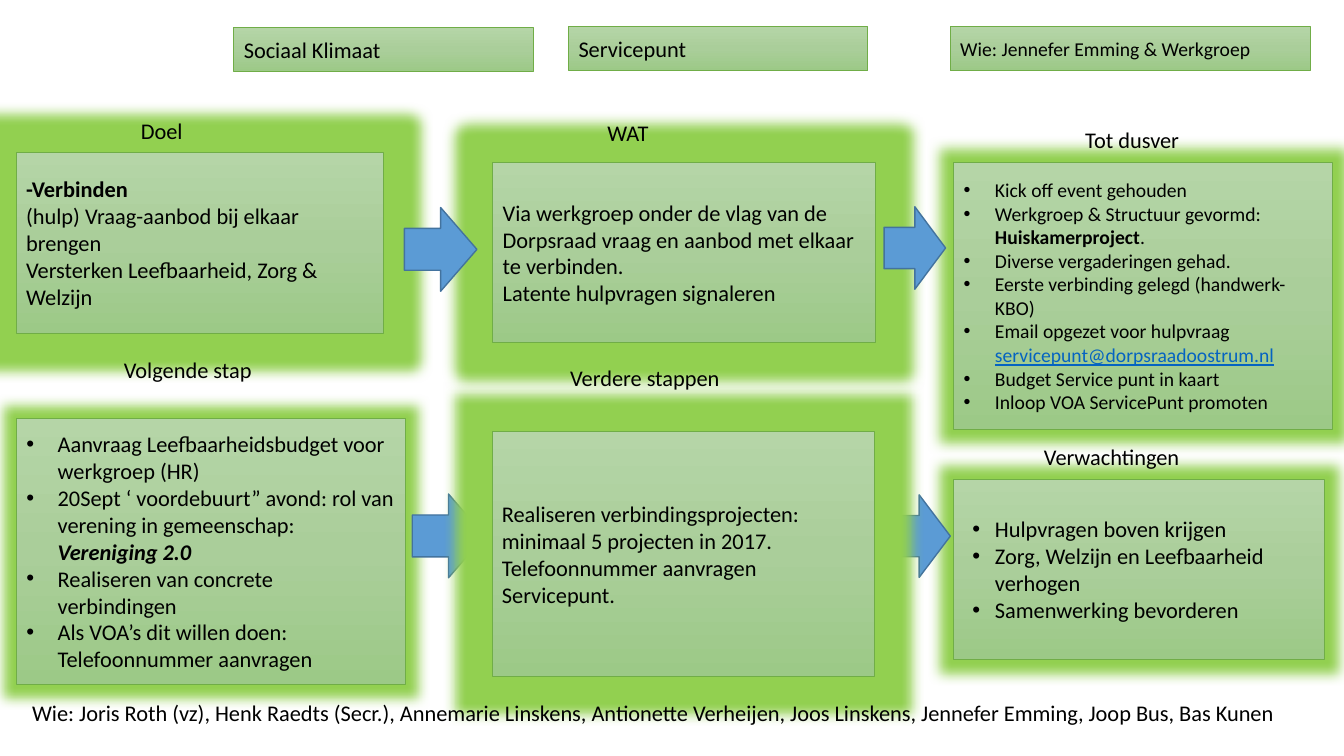
from dataclasses import dataclass
from lxml import etree
from pptx import Presentation
from pptx import util as u
from pptx.dml.color import RGBColor
from pptx.enum import shapes, text
from pptx.oxml.ns import qn


@dataclass(frozen=True)
class Theme:
    font: str = "Calibri"
    body: int = 16
    small: int = 14
    ink: str = "000000"
    link: str = "0563C1"
    top: str = "B5D5A7"
    middle: str = "AACE9A"
    bottom: str = "9CC987"
    border: str = "70AD47"
    glow: str = "92D050"
    arrow: str = "5B9BD5"
    arrow_border: str = "43739E"


theme = Theme()


def write(sp, paragraphs, size=theme.body, hanging=None, wrap=True):
    tf = sp.text_frame
    tf.word_wrap = wrap
    tf.auto_size = text.MSO_AUTO_SIZE.NONE if wrap else text.MSO_AUTO_SIZE.SHAPE_TO_FIT_TEXT
    tf.vertical_anchor = text.MSO_ANCHOR.MIDDLE if wrap else text.MSO_ANCHOR.TOP
    for i, runs in enumerate(paragraphs):
        p = tf.add_paragraph() if i else tf.paragraphs[0]
        p.alignment = text.PP_ALIGN.LEFT
        p.space_before = u.Pt(0)
        if hanging:
            pPr = p._p.get_or_add_pPr()
            pPr.set("marL", str(u.Cm(0.79)))
            pPr.set("indent", str(-u.Cm(hanging)))
            etree.SubElement(pPr, qn("a:buFont"), typeface="Arial")
            etree.SubElement(pPr, qn("a:buChar"), char="•")
        for content, style in runs:
            for j, line in enumerate(content.split("\n")):
                if j:
                    p.add_line_break()
                r = p.add_run()
                r.text = line
                r.font.name = theme.font
                r.font.size = u.Pt(size)
                r.font.bold = "b" in style
                r.font.italic = "i" in style
                r.font.underline = "u" in style
                r.font.color.rgb = RGBColor.from_string(theme.link if "u" in style else theme.ink)


def paint(sp, glow=True):
    sp.shadow.inherit = False
    sp.fill.gradient()
    sp.fill.gradient_angle = 270
    first, last = sp.fill.gradient_stops
    first.position, last.position = 0, 1
    first.color.rgb = RGBColor.from_string(theme.top)
    last.color.rgb = RGBColor.from_string(theme.bottom)
    stop = etree.Element(qn("a:gs"), pos="50000")
    etree.SubElement(stop, qn("a:srgbClr"), val=theme.middle)
    sp.element.find(".//" + qn("a:gsLst")).insert(1, stop)
    sp.line.color.rgb = RGBColor.from_string(theme.border)
    sp.line.width = u.Pt(0.5)
    if glow:
        effects = sp.element.find(".//" + qn("a:effectLst"))
        halo = etree.SubElement(effects, qn("a:glow"), rad=str(u.Pt(18)))
        etree.SubElement(halo, qn("a:srgbClr"), val=theme.glow)


prs = Presentation()
prs.slide_width, prs.slide_height = u.Cm(33.87), u.Cm(19.05)
s = prs.slides.add_slide(prs.slide_layouts[4])
bodies = [ph for ph in s.placeholders if ph.placeholder_format.idx in (1, 2, 3, 4)]

lists = [
    ((24.03, 4.09, 9.55, 6.73), theme.small, 0.79, [
        [("Kick off event gehouden", "")],
        [("Werkgroep & Structuur gevormd: ", ""), ("Huiskamerproject", "b"), (".", "")],
        [("Diverse vergaderingen gehad.", "")],
        [("Eerste verbinding gelegd (handwerk-KBO)", "")],
        [("Email opgezet voor hulpvraag ", ""), ("servicepunt@dorpsraadoostrum.nl", "u")],
        [("Budget Service punt in kaart", "")],
        [("Inloop VOA ServicePunt promoten", "")]]),
    ((0.41, 10.54, 9.8, 6.71), theme.body, 0.79, [
        [("Aanvraag Leefbaarheidsbudget voor werkgroep (HR)", "")],
        [("20Sept ‘ voordebuurt” avond: rol van verening in gemeenschap: ", ""),
         ("Vereniging 2.0", "bi")],
        [("Realiseren van concrete verbindingen", "")],
        [("Als VOA’s dit willen doen: Telefoonnummer aanvragen", "")]]),
    ((24.03, 12.07, 9.35, 4.55), theme.body, 0.57, [
        [("Hulpvragen boven krijgen", "")],
        [("Zorg, Welzijn en Leefbaarheid verhogen", "")],
        [("Samenwerking bevorderen", "")]]),
]
for sp, (box, size, hanging, items) in zip(bodies, lists):
    sp.left, sp.top, sp.width, sp.height = map(u.Cm, box)
    paint(sp)
    write(sp, items, size, hanging)
for spare in bodies[len(lists):]:
    spare.element.getparent().remove(spare.element)

for box in [(22.28, 5.21, 1.55, 2.08), (10.39, 12.45, 1.83, 2.11),
            (22.38, 12.47, 1.57, 2.08), (10.19, 5.23, 1.83, 2.11)]:
    arrow = s.shapes.add_shape(shapes.MSO_SHAPE.RIGHT_ARROW, *map(u.Cm, box))
    arrow.shadow.inherit = False
    arrow.fill.solid()
    arrow.fill.fore_color.rgb = RGBColor.from_string(theme.arrow)
    arrow.line.color.rgb = RGBColor.from_string(theme.arrow_border)
    arrow.line.width = u.Pt(1)

panels = [
    ((12.42, 4.09, 9.63, 4.55), theme.body, True, [
        [("Via werkgroep onder de vlag van de Dorpsraad vraag en aanbod met elkaar te verbinden.", "")],
        [("Latente hulpvragen signaleren", "")]]),
    ((12.4, 10.87, 9.63, 6.17), theme.body, True, [
        [("Realiseren verbindingsprojecten:\nminimaal 5 projecten in 2017.", "")],
        [("Telefoonnummer aanvragen Servicepunt.", "")]]),
    ((0.41, 3.84, 9.25, 4.55), theme.body, True, [
        [("-Verbinden\n", "b"),
         ("(hulp) Vraag-aanbod bij elkaar brengen\nVersterken Leefbaarheid, Zorg & Welzijn", "")]]),
    ((14.33, 0.66, 7.54, 1.12), theme.body, False, [[("Servicepunt", "")]]),
    ((23.95, 0.66, 9.07, 1.12), theme.small, False, [[("Wie: Jennefer Emming & Werkgroep", "")]]),
]
arrows = [sp for sp in s.shapes if not sp.is_placeholder]
for box, size, glow, paragraphs in panels:
    sp = s.shapes.add_shape(shapes.MSO_SHAPE.RECTANGLE, *map(u.Cm, box))
    paint(sp, glow)
    write(sp, paragraphs, size)
for arrow in (arrows[0], arrows[3]):
    s.shapes.element.append(arrow.element)

title = s.shapes.title
title.left, title.top, title.width, title.height = map(u.Cm, (5.89, 0.69, 7.54, 1.12))
paint(title, False)
write(title, [[("Sociaal Klimaat", "")]])

for left, top, width, label in [
    (3.3, 2.82, 1.57, "Doel"),
    (15.06, 2.87, 1.55, "WAT"),
    (27.1, 3.05, 2.92, "Tot dusver"),
    (2.87, 8.84, 3.78, "Volgende stap"),
    (14.12, 9.04, 4.32, "Verdere stappen"),
    (26.06, 11.05, 3.96, "Verwachtingen"),
    (0.56, 17.5, 32.77, "Wie: Joris Roth (vz), Henk Raedts (Secr.), Annemarie Linskens, "
     "Antionette Verheijen, Joos Linskens, Jennefer Emming, Joop Bus, Bas Kunen"),
]:
    sp = s.shapes.add_textbox(u.Cm(left), u.Cm(top), u.Cm(width), u.Cm(0.94))
    write(sp, [[(label, "")]], wrap=False)

prs.save("out.pptx")
